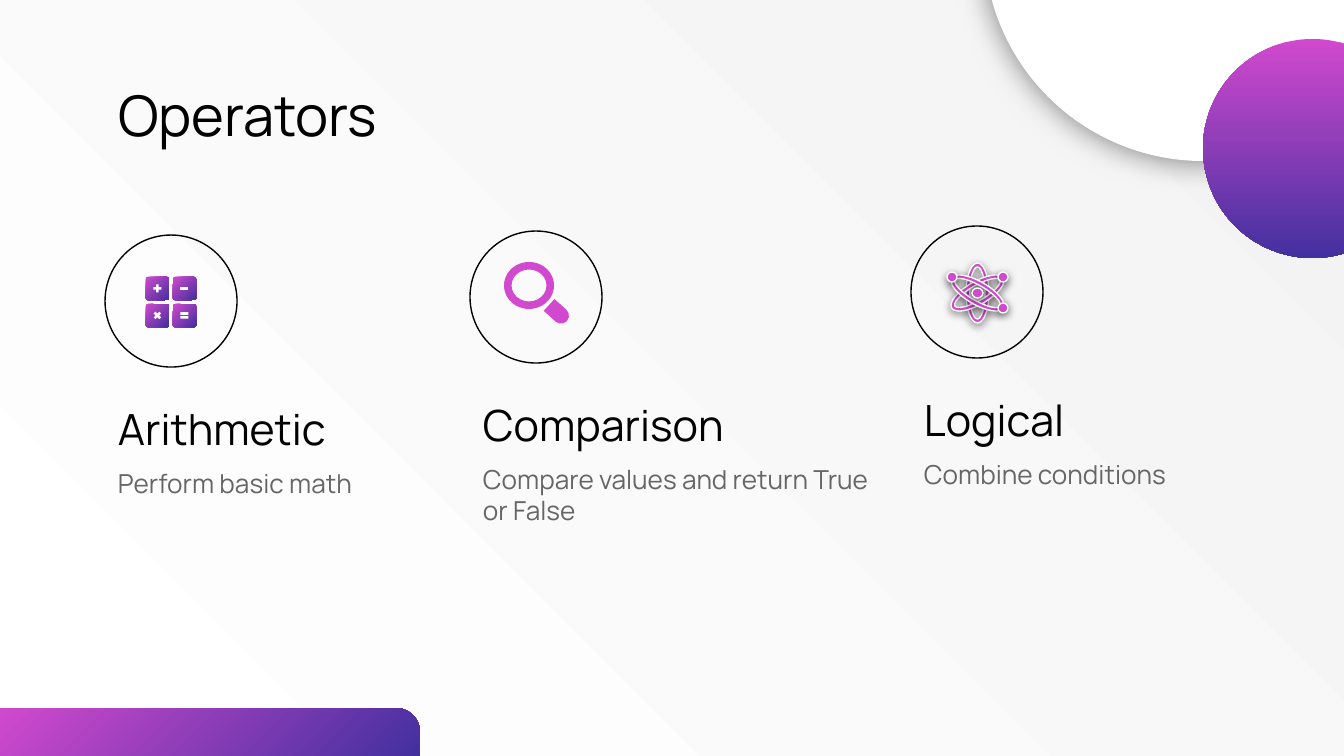
import pptx
import pptx.util
import pptx.dml.color
import pptx.enum.shapes
import pptx.enum.text
import pptx.oxml

PX = 6804
PINK, INDIGO, WHITE, BLACK, GREY = "D149CE", "43309F", "FFFFFF", "000000", "666666"
KIND = pptx.enum.shapes.MSO_SHAPE
ANCHOR = pptx.enum.text.MSO_ANCHOR


def paint(fill, *colours, angle=0):
    rgb = [pptx.dml.color.RGBColor.from_string(colour) for colour in colours]
    if len(rgb) == 1:
        fill.solid()
        fill.fore_color.rgb = rgb[0]
    elif rgb:
        fill.gradient()
        fill.gradient_angle = angle
        for stop, colour in zip(fill.gradient_stops, rgb):
            stop.color.rgb = colour
    else:
        fill.background()


def write(text, left, top, width, height, size=14, colour=BLACK, anchor=ANCHOR.MIDDLE):
    box = page.shapes.add_textbox(left * PX, top * PX, width * PX, height * PX)
    frame = box.text_frame
    frame.word_wrap = True
    frame.vertical_anchor = anchor
    frame.margin_left = frame.margin_right = 13 * PX
    frame.margin_top = frame.margin_bottom = 13 * PX
    span = frame.paragraphs[0].add_run()
    span.text = text
    span.font.name = "Manrope"
    span.font.size = pptx.util.Pt(size)
    paint(span.font.fill, colour)


deck = pptx.Presentation()
deck.slide_width, deck.slide_height = 1344 * PX, 756 * PX
page = deck.slides.add_slide(deck.slide_layouts[6])
paint(page.background.fill, WHITE, "F3F3F3", angle=45)

columns = [
    ("Arithmetic", "Perform basic math", 105, 235),
    ("Comparison", "Compare values and return True or False", 470, 231),
    ("Logical", "Combine conditions", 911, 226),
]
write("Operators", 105, 79, 1134, 70, size=30)
for heading, summary, left, top in columns:
    write(heading, left, top + 167, 433, 52, size=23)
    write(summary, left, top + 219, 433, 148, colour=GREY, anchor=ANCHOR.TOP)

gradient = (PINK, INDIGO)
glow, lift = (16.9, 0), (4.5, 1.5)
pieces = [
    (KIND.ROUND_1_RECTANGLE, 0, 708, 420, 48, 0.5, 0, gradient, 315, None, None),
    (KIND.OVAL, 984, -277, 438, 438, None, 0, [WHITE], 0, None, glow),
    (KIND.OVAL, 1203, 39, 219, 219, None, 0, gradient, 270, None, None),
    (KIND.DONUT, 504, 262, 50, 47, 0.16, 0, [PINK], 0, None, None),
    (KIND.ROUND_2_SAME_RECTANGLE, 550, 301, 16, 24, 0.5, 132, [PINK], 0, None, None),
]
for heading, summary, left, top in columns:
    pieces.append((KIND.OVAL, left, top, 132, 132, None, 0, [], 0, BLACK, None))

symbols = [KIND.MATH_PLUS, KIND.MATH_MINUS, KIND.MATH_MULTIPLY, KIND.MATH_EQUAL]
for index, symbol in enumerate(symbols):
    left, top = 146 + index % 2 * 27, 277 + index // 2 * 27
    pieces.append((KIND.ROUNDED_RECTANGLE, left, top, 23, 23, 0.08, 0, gradient, 315, None, None))
    pieces.append((symbol, left + 6, top + 6, 11, 11, None, 0, [WHITE], 0, None, None))

for turn in (0, 60, 120):
    pieces.append((KIND.DONUT, 966, 263, 23, 60, 0.17, turn, [PINK], 0, WHITE, lift))
for left, top in [(947, 272), (998, 272), (998, 303)]:
    pieces.append((KIND.OVAL, left, top, 10, 10, None, 0, [PINK], 0, WHITE, lift))
pieces.append((KIND.OVAL, 972, 288, 11, 10, None, 0, [PINK], 0, WHITE, lift))

for kind, left, top, width, height, bend, turn, fills, angle, outline, shade in pieces:
    shape = page.shapes.add_shape(kind, left * PX, top * PX, width * PX, height * PX)
    shape.rotation = turn
    shape.shadow.inherit = False
    if bend is not None:
        shape.adjustments[0] = bend
    paint(shape.fill, *fills, angle=angle)
    paint(shape.line.fill, *([outline] if outline else []))
    if outline:
        shape.line.width = pptx.util.Pt(0.75)
    if shade:
        blur, distance = (pptx.util.Pt(length) for length in shade)
        shape._element.spPr.find(pptx.oxml.ns.qn("a:effectLst")).append(pptx.oxml.parse_xml(
            f'<a:outerShdw {pptx.oxml.ns.nsdecls("a")} blurRad="{blur}" dist="{distance}" '
            'dir="5400000" algn="bl" rotWithShape="0"><a:srgbClr val="000000">'
            '<a:alpha val="50000"/></a:srgbClr></a:outerShdw>'))

deck.save("out.pptx")
